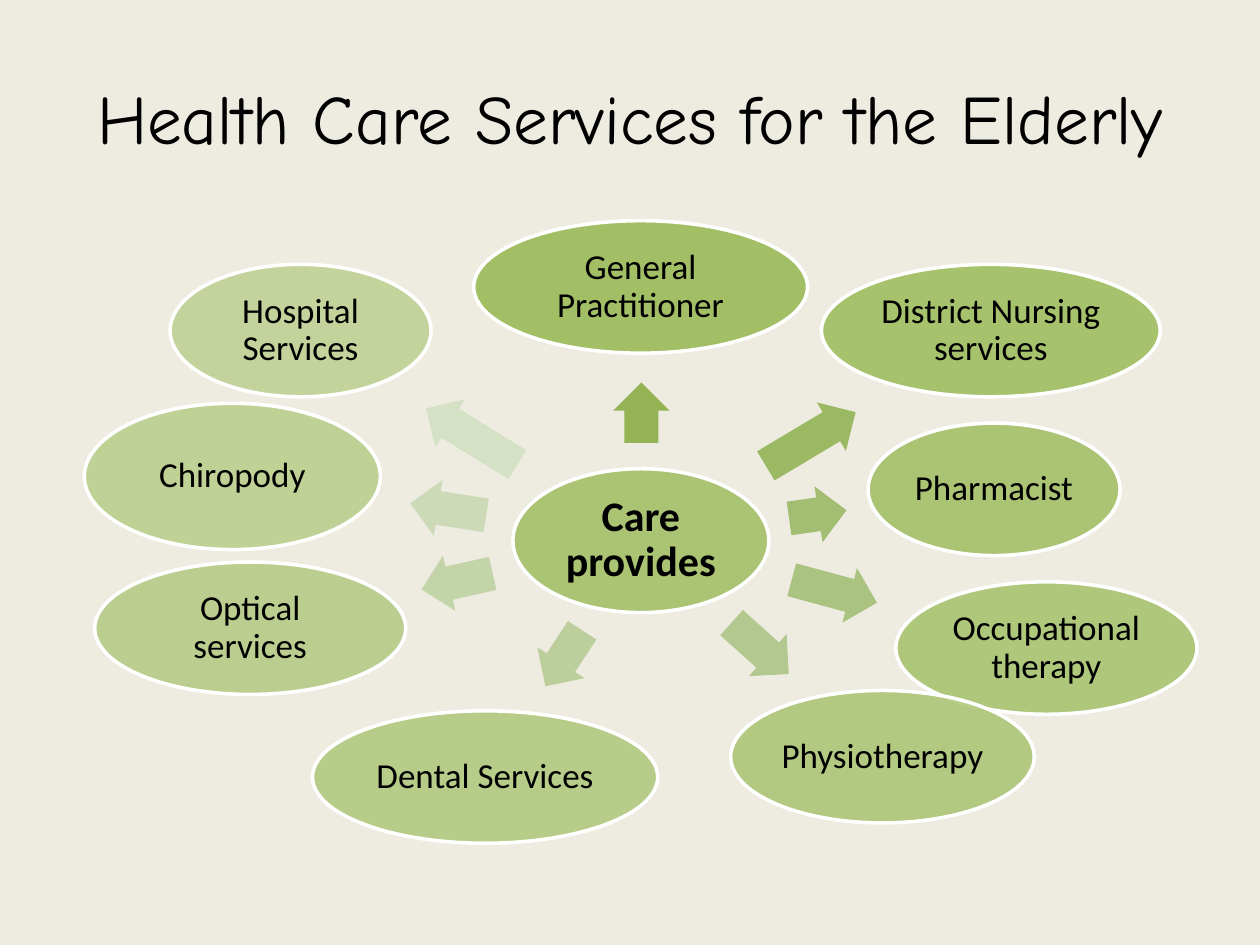
from dataclasses import dataclass

from lxml.etree import SubElement
from pptx import Presentation
from pptx.dml.color import RGBColor as Rgb
from pptx.enum.shapes import MSO_SHAPE as Kind
from pptx.enum.text import MSO_ANCHOR as Anchor, PP_ALIGN as Align
from pptx.oxml.ns import qn
from pptx.util import Cm, Pt


@dataclass(frozen=True)
class Theme:
    back: str = "EEECE1"
    green: str = "9BBB59"
    white: str = "FFFFFF"
    ink: str = "000000"
    head: str = "Comic Neue"
    body: str = "Calibri"
    title: float = 39.6
    hub: float = 24
    node: float = 20
    rim: float = 2
    arrows: tuple = ("94B355", "9BB863", "A3BD72", "ABC380", "B3C88E",
                     "BBCE9C", "C4D4A9", "CCDAB7", "D5E1C4")


theme = Theme()


def write(shape, text, size, font, bold=False):
    frame = shape.text_frame
    frame.word_wrap = True
    frame.vertical_anchor = Anchor.MIDDLE
    frame.text = text
    para = frame.paragraphs[0]
    para.alignment = Align.CENTER
    face = para.runs[0].font
    face.name, face.size, face.bold = font, Pt(size), bold
    face.color.rgb = Rgb.from_string(theme.ink)


def bubble(text, box, alpha, size, bold=False):
    oval = slide.shapes.add_shape(Kind.OVAL, *map(Cm, box))
    oval.shadow.inherit = False
    oval.fill.solid()
    oval.fill.fore_color.rgb = Rgb.from_string(theme.green)
    tint = oval.element.spPr.find(qn("a:solidFill")).find(qn("a:srgbClr"))
    SubElement(tint, qn("a:alpha"), val=str(alpha * 1000))
    oval.line.color.rgb = Rgb.from_string(theme.white)
    oval.line.width = Pt(theme.rim)
    write(oval, text, size, theme.body, bold)
    frame = oval.text_frame
    frame.margin_left = frame.margin_right = Cm(0.07)
    frame.margin_top = frame.margin_bottom = Cm(0.07)
    frame.paragraphs[0].line_spacing = 0.9


# Slide and background
deck = Presentation()
deck.slide_width, deck.slide_height = Cm(25.4), Cm(19.05)
slide = deck.slides.add_slide(deck.slide_layouts[6])
slide.background.fill.solid()
slide.background.fill.fore_color.rgb = Rgb.from_string(theme.back)

# Title
title = slide.shapes.add_textbox(Cm(1.27), Cm(0.76), Cm(22.86), Cm(3.18))
write(title, "Health Care Services for the Elderly", theme.title, theme.head)

# Hub
bubble("Care provides", (10.34, 9.45, 5.16, 2.9), 80, theme.hub, True)

# Services, clockwise: name, oval box, arrow left, top, length and angle
tall = 2.67
nodes = [
    ("General Practitioner", (9.55, 4.45, 6.73, tall), (12.32, 7.75, 1.22, 270)),
    ("District Nursing services", (16.56, 5.33, 6.83, tall), (15.29, 8.28, 2.11, 329.1)),
    ("Pharmacist", (17.5, 8.53, 5.08, tall), (15.9, 9.8, 1.17, 351.9)),
    ("Occupational therapy", (18.06, 11.73, 6.07, tall), (15.93, 11.35, 1.78, 15.1)),
    ("Physiotherapy", (14.73, 13.92, 6.12, tall), (14.55, 12.5, 1.55, 42)),
    ("Dental Services", (6.3, 14.33, 6.96, tall), (10.69, 12.7, 1.35, 123.3)),
    ("Optical services", (1.91, 11.33, 6.27, tall), (8.48, 11.15, 1.47, 167.3)),
    ("Chiropody", (1.7, 8.13, 5.97, 2.95), (8.26, 9.7, 1.55, 188.9)),
    ("Hospital Services", (3.43, 5.33, 5.26, tall), (8.43, 8.23, 2.16, 211.6)),
]

# Each arrow and its oval fade a step further round the ring
for step, (name, box, (left, top, length, angle)) in enumerate(nodes):
    arrow = slide.shapes.add_shape(
        Kind.RIGHT_ARROW, Cm(left), Cm(top), Cm(length), Cm(1.14))
    arrow.adjustments[0], arrow.adjustments[1] = 0.6, 0.5
    arrow.rotation = angle
    arrow.shadow.inherit = False
    arrow.fill.solid()
    arrow.fill.fore_color.rgb = Rgb.from_string(theme.arrows[step])
    arrow.line.fill.background()
    bubble(name, box, 90 - 5 * step, theme.node)

deck.save("out.pptx")
